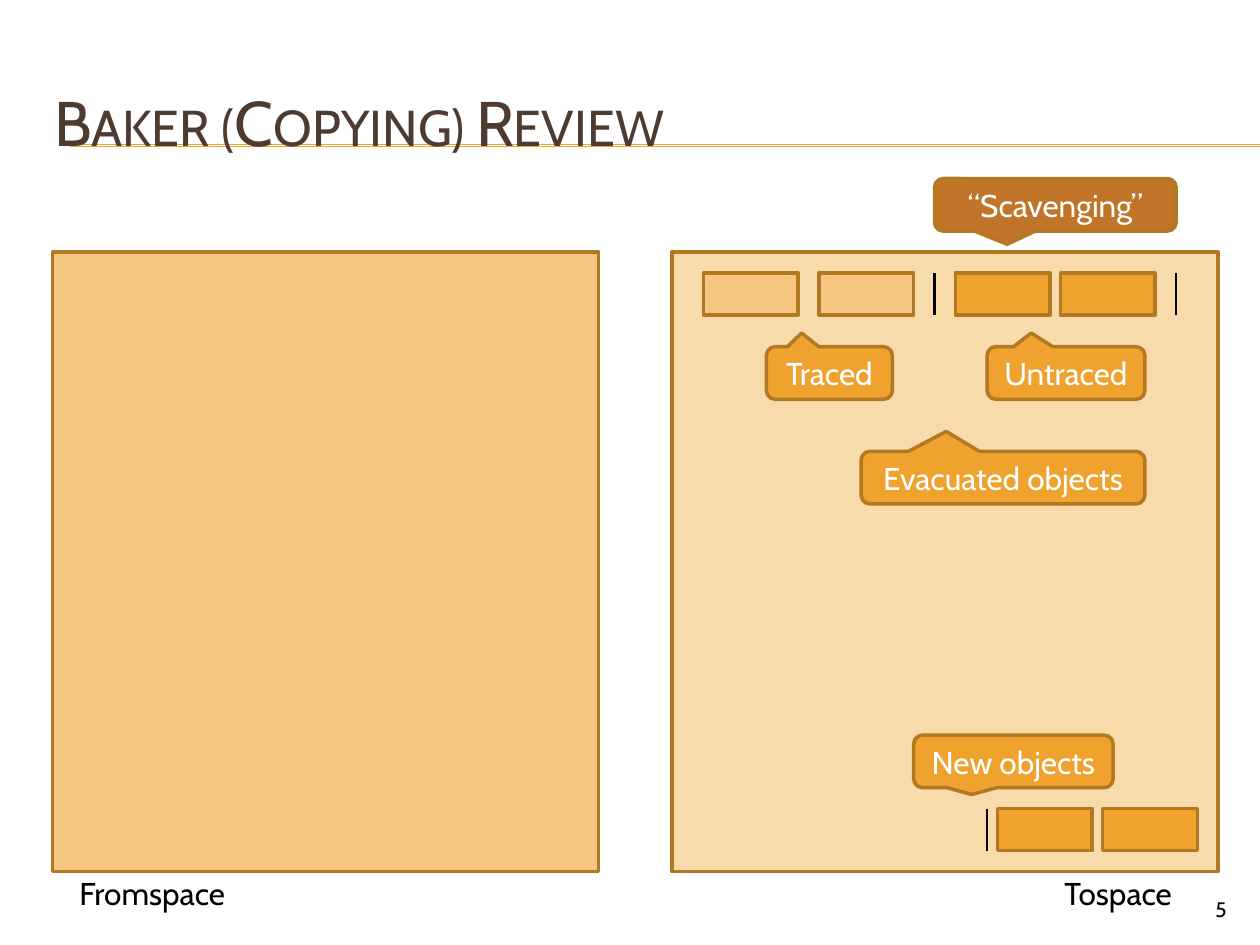
import pptx
import pptx.util
import pptx.dml.color
import pptx.enum.shapes
import pptx.enum.text
import pptx.oxml.ns
import lxml.etree

Cm = pptx.util.Cm
Pt = pptx.util.Pt
Shape = pptx.enum.shapes.MSO_SHAPE
Align = pptx.enum.text.PP_ALIGN
Anchor = pptx.enum.text.MSO_ANCHOR
RGB = pptx.dml.color.RGBColor.from_string

hues = {"edge": "B27822", "from": "F6C782", "to": "F9DAAB", "gold": "F0A22E",
        "rust": "C17529", "brown": "4E3B30", "black": "000000", "white": "FFFFFF"}

deck = pptx.Presentation()
deck.slide_width, deck.slide_height = Cm(25.4), Cm(19.05)
slide = deck.slides.add_slide(deck.slide_layouts[5])
shapes = slide.shapes


def block(kind, left, top, width, height, fill):
    item = shapes.add_shape(kind, Cm(left), Cm(top), Cm(width), Cm(height))
    item.shadow.inherit = False
    item.fill.solid()
    item.fill.fore_color.rgb = RGB(hues[fill])
    item.line.color.rgb = RGB(hues["edge"])
    item.line.width = Pt(2)
    return item


def write(item, text, size, color, align):
    frame = item.text_frame
    frame.text = text
    frame.word_wrap = True
    frame.auto_size = pptx.enum.text.MSO_AUTO_SIZE.NONE
    frame.vertical_anchor = Anchor.MIDDLE
    para = frame.paragraphs[0]
    para.alignment = align
    font = para.runs[0].font
    font.name, font.size = "Cabin", Pt(size)
    font.color.rgb = RGB(hues[color])


title = shapes.title
title.left, title.top, title.width, title.height = Cm(0.84), Cm(1.27), Cm(24.13), Cm(2.34)
write(title, "Baker (Copying) Review", 36, "brown", Align.LEFT)
title.text_frame.paragraphs[0].runs[0].font._element.set("cap", "small")

lines = [(1.42, y, 25.4, y, "gold", 0.75) for y in (2.92, 2.95)]
lines += [(x, y, x, y + 0.85, "black", 1.5)
          for x, y in ((18.84, 5.5), (23.71, 5.5), (19.9, 16.3))]

for x, fill in ((1.06, "from"), (13.55, "to")):
    block(Shape.RECTANGLE, x, 5.08, 11.01, 12.49, fill)

for x, y, fill in ((14.18, 5.5, "from"), (16.51, 5.5, "from"),
                   (19.26, 5.5, "gold"), (21.38, 5.5, "gold"),
                   (20.11, 16.3, "gold"), (22.23, 16.3, "gold")):
    block(Shape.RECTANGLE, x, y, 1.91, 0.85, fill)

for x1, y1, x2, y2, color, width in lines:
    line = shapes.add_connector(pptx.enum.shapes.MSO_CONNECTOR.STRAIGHT,
                                Cm(x1), Cm(y1), Cm(x2), Cm(y2))
    line.line.color.rgb = RGB(hues[color])
    line.line.width = Pt(width)
    lxml.etree.SubElement(line._element.spPr, pptx.oxml.ns.qn("a:effectLst"))
shapes._spTree.append(title._element)

for text, x, y, width, fill, tip in (
        ("New objects", 18.42, 14.82, 4.02, "gold", (-0.21, 0.63)),
        ("Evacuated objects", 17.36, 9.1, 5.72, "gold", (-0.2, -0.88)),
        ("Traced", 15.45, 6.99, 2.54, "gold", (-0.22, -0.76)),
        ("Untraced", 19.9, 6.99, 3.18, "gold", (-0.22, -0.76)),
        ("“Scavenging”", 18.84, 3.6, 4.87, "rust", (-0.2, 0.75))):
    call = block(Shape.ROUNDED_RECTANGULAR_CALLOUT, x, y, width, 1.06, fill)
    call.adjustments[0], call.adjustments[1] = tip
    write(call, text, 18, "white", Align.CENTER)

for text, x, y, width, height, size, align in (
        ("Fromspace", 1.06, 17.57, 4.02, 0.85, 18, Align.CENTER),
        ("Tospace", 20.53, 17.57, 4.02, 0.85, 18, Align.CENTER),
        ("5", 22.86, 17.99, 2.12, 0.69, 12, Align.RIGHT)):
    label = shapes.add_textbox(Cm(x), Cm(y), Cm(width), Cm(height))
    write(label, text, size, "black", align)

deck.save("out.pptx")
